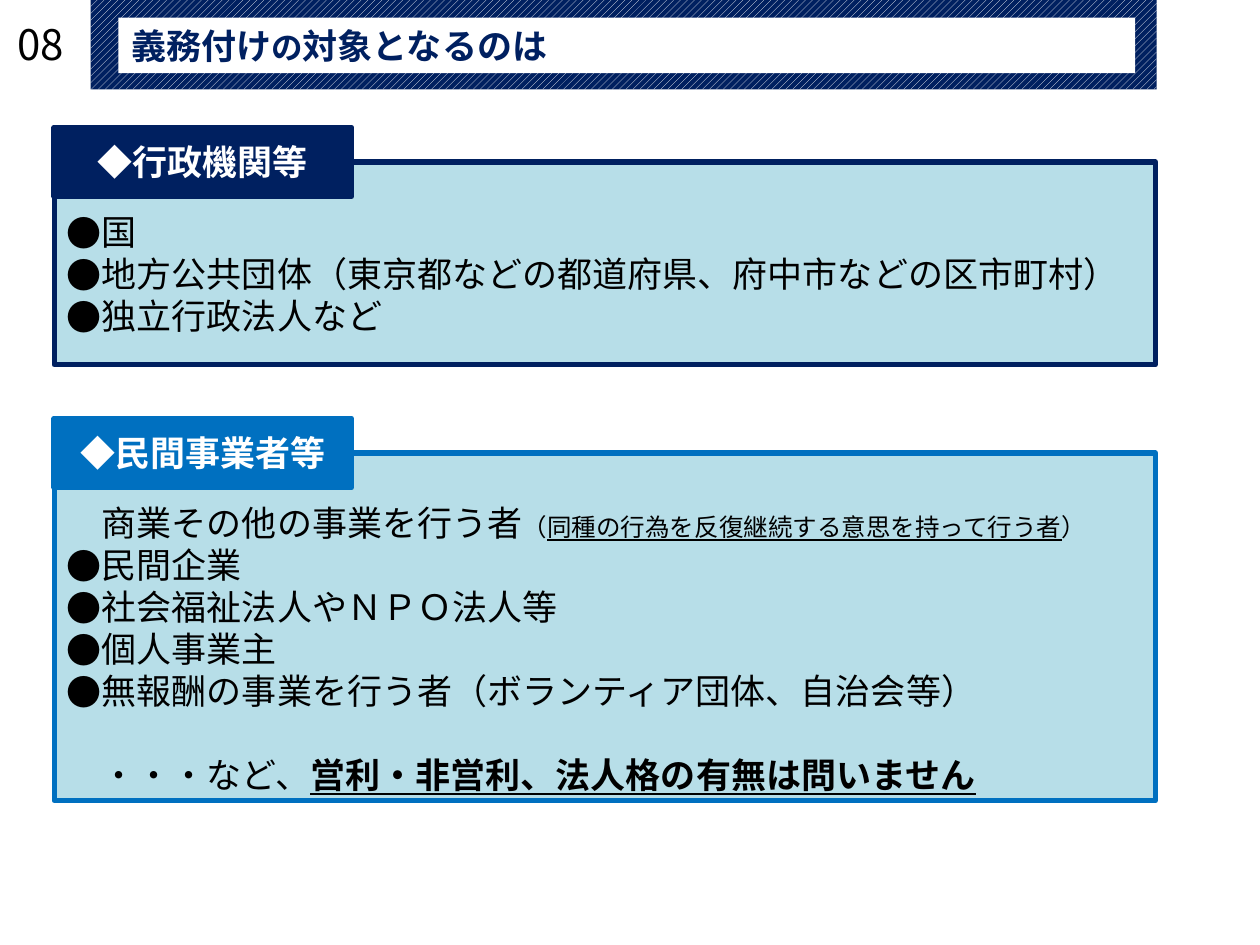
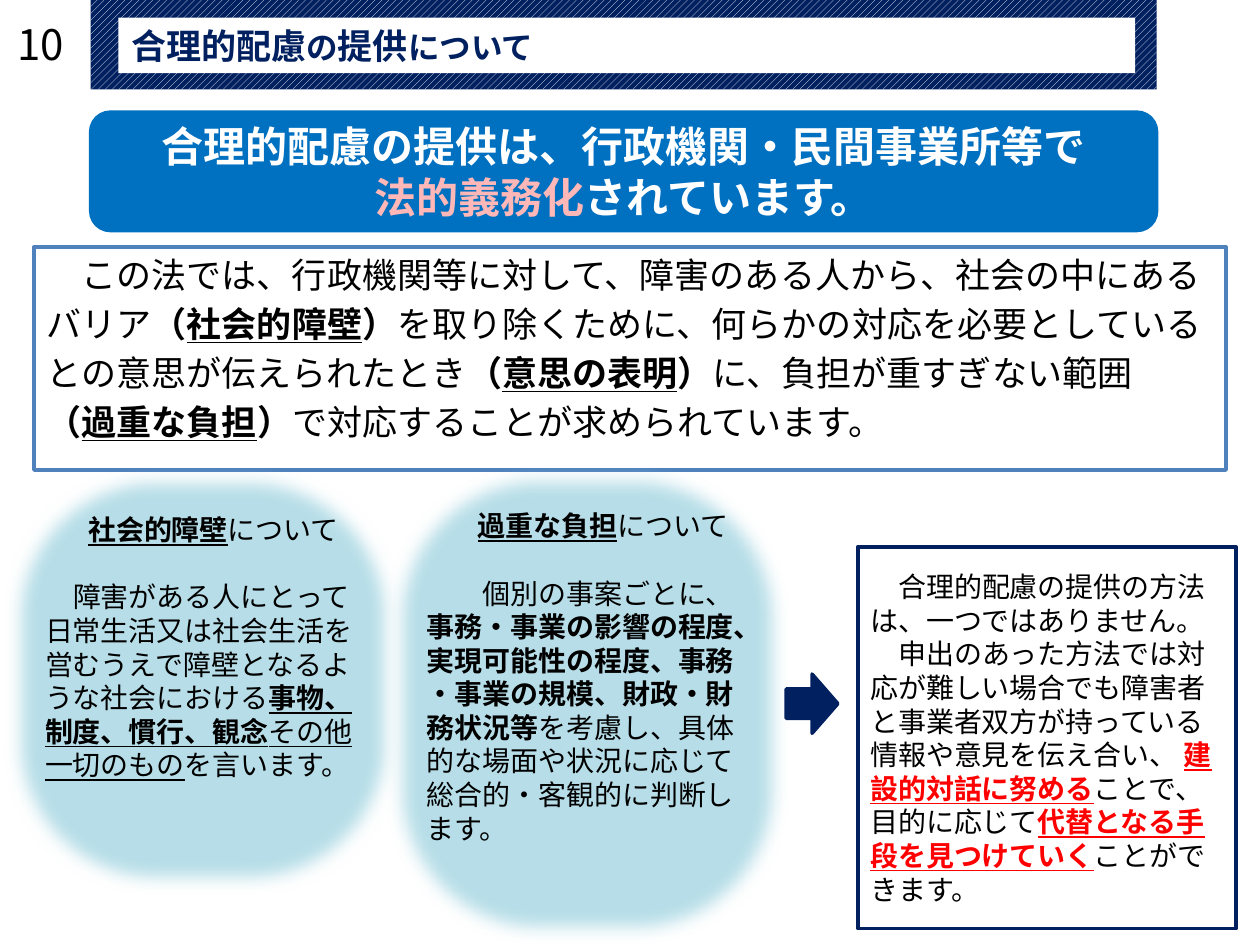
from dataclasses import dataclass
from typing import Optional

import lxml.etree
import pptx
import pptx.dml.color
import pptx.enum.dml
import pptx.enum.shapes
import pptx.enum.text
import pptx.oxml.ns
import pptx.util

SHAPES = pptx.enum.shapes.MSO_SHAPE
ALIGN = pptx.enum.text.PP_ALIGN
ANCHOR = pptx.enum.text.MSO_ANCHOR


@dataclass(frozen=True)
class Theme:
    font: str = "Noto Sans CJK JP"
    navy: str = "002060"
    blue: str = "0070C0"
    steel: str = "4F81BD"
    pale: str = "B7DEE8"
    pink: str = "FFB7B7"
    red: str = "FF0000"
    white: str = "FFFFFF"
    black: str = "000000"
    headline: int = 24
    body: int = 20
    title_particle: int = 18
    small: int = 16
    aside: int = 14
    leading: float = 1.2


@dataclass(frozen=True)
class Grid:
    width: int = pptx.util.Inches(10)
    height: int = pptx.util.Inches(7.5)
    columns: int = 100
    rows: int = 75


THEME = Theme()
GRID = Grid()


@dataclass(frozen=True)
class Area:
    column: float
    row: float
    columns: float
    rows: float

    def emu(self) -> tuple[int, int, int, int]:
        across, down = GRID.width / GRID.columns, GRID.height / GRID.rows
        return (round(self.column * across), round(self.row * down),
                round(self.columns * across), round(self.rows * down))


@dataclass(frozen=True)
class Run:
    text: str
    bold: Optional[bool] = None
    underline: bool = False
    size: Optional[int] = None
    color: Optional[str] = None


@dataclass(frozen=True)
class Line:
    runs: tuple[Run, ...]
    bullet: str = ""
    margin: float = 0
    first_indent: float = 0
    before: float = 0
    after: float = 0
    align: Optional[ALIGN] = None


@dataclass(frozen=True)
class Obligated:
    heading: str
    color: str
    tab_row: float
    panel_rows: float
    members: tuple[Line, ...]


@dataclass(frozen=True)
class Explanation:
    card: Area
    caption: Area
    term: str
    indent: int
    sentences: tuple[tuple[Run, ...], ...]


def line(*runs: str | Run, **layout) -> Line:
    return Line(tuple(Run(r) if isinstance(r, str) else r for r in runs), **layout)


def key(text: str, **style) -> Run:
    return Run(text, bold=True, underline=True, **style)


def bracketed(term: str) -> tuple[Run, ...]:
    return Run("（", bold=True), key(term), Run("）", bold=True)


def member(text: str) -> Line:
    return line(text, bullet="●", margin=1, first_indent=-1)


def rgb(color: str) -> pptx.dml.color.RGBColor:
    return pptx.dml.color.RGBColor.from_string(color)


def child(parent, tag: str, **attributes):
    element = lxml.etree.SubElement(parent, pptx.oxml.ns.qn(tag))
    for name, value in attributes.items():
        element.set(name, str(value))
    return element


def write_text(shape, lines, *, size=THEME.body, color=THEME.black, bold=False,
               align=ALIGN.LEFT, anchor=ANCHOR.TOP, lead_rows=0.0, gap=0.0) -> None:
    frame = shape.text_frame
    frame.word_wrap = True
    frame.auto_size = pptx.enum.text.MSO_AUTO_SIZE.NONE
    frame.vertical_anchor = anchor
    frame.margin_left = frame.margin_right = pptx.util.Inches(0.1)
    frame.margin_bottom = pptx.util.Inches(0.05)
    frame.margin_top = pptx.util.Inches(0.05) + pptx.util.Pt(lead_rows * size * THEME.leading)
    for index, item in enumerate(lines):
        paragraph = frame.paragraphs[0] if index == 0 else frame.add_paragraph()
        paragraph.alignment = align if item.align is None else item.align
        paragraph.line_spacing = pptx.util.Pt(size * THEME.leading)
        paragraph.space_before = pptx.util.Pt(item.before * size * THEME.leading + gap)
        paragraph.space_after = pptx.util.Pt(item.after * size * THEME.leading)
        layout = paragraph._p.get_or_add_pPr()
        layout.set("marL", str(pptx.util.Pt(item.margin * size)))
        layout.set("indent", str(pptx.util.Pt(item.first_indent * size)))
        if item.bullet:
            child(layout, "a:buFont", typeface=THEME.font)
            child(layout, "a:buChar", char=item.bullet)
        else:
            child(layout, "a:buNone")
        for part in item.runs:
            run = paragraph.add_run()
            run.text = part.text
            run.font.size = pptx.util.Pt(part.size or size)
            run.font.bold = bold if part.bold is None else part.bold
            run.font.underline = part.underline
            run.font.color.rgb = rgb(part.color or color)
            run.font.name = THEME.font
            child(run._r.get_or_add_rPr(), "a:ea", typeface=THEME.font)


def paint(shape, fill: Optional[str] = None, border: Optional[str] = None,
          weight: float = 3) -> None:
    if fill:
        shape.fill.solid()
        shape.fill.fore_color.rgb = rgb(fill)
    else:
        shape.fill.background()
    if border:
        shape.line.color.rgb = rgb(border)
        shape.line.width = pptx.util.Pt(weight)
    else:
        shape.line.fill.background()


def place(shape, area: Area) -> None:
    shape.left, shape.top, shape.width, shape.height = area.emu()


def add_block(slide, kind, area: Area, **look):
    block = slide.shapes.add_shape(kind, *area.emu())
    block.shadow.inherit = False
    paint(block, **look)
    return block


def add_header(slide, number: str, title_line: Line) -> None:
    title = slide.shapes.title
    place(title, Area(9.4, 1.4, 80.7, 4.4))
    paint(title, fill=THEME.white)
    write_text(title, [title_line], color=THEME.navy, bold=True, anchor=ANCHOR.MIDDLE)
    band = add_block(slide, SHAPES.RECTANGLE, Area(7.2, 0, 84.6, 7.1))
    band.fill.patterned()
    band.fill.pattern = pptx.enum.dml.MSO_PATTERN.WIDE_UPWARD_DIAGONAL
    band.fill.fore_color.rgb = rgb(THEME.white)
    band.fill.back_color.rgb = rgb(THEME.navy)
    title._element.addprevious(band._element)
    page = slide.shapes.add_textbox(*Area(0.4, 1, 6.3, 5).emu())
    write_text(page, [line(number)], size=THEME.headline, anchor=ANCHOR.MIDDLE)


def add_obligated(slide, panel, group: Obligated) -> None:
    place(panel, Area(4.3, group.tab_row + 2.75, 87.4, group.panel_rows))
    paint(panel, fill=THEME.pale, border=group.color)
    write_text(panel, group.members, lead_rows=1)
    tab = add_block(slide, SHAPES.RECTANGLE, Area(4.3, group.tab_row, 23.6, 5.5),
                    fill=group.color, border=group.color)
    write_text(tab, [line(group.heading)], color=THEME.white, bold=True,
               align=ALIGN.CENTER, anchor=ANCHOR.MIDDLE)


def add_explanation(slide, topic: Explanation) -> None:
    card = add_block(slide, SHAPES.ROUNDED_RECTANGLE, topic.card, fill=THEME.pale)
    card.adjustments[0] = 0.34
    effects = card._element.spPr.find(pptx.oxml.ns.qn("a:effectLst"))
    child(effects, "a:softEdge", rad=pptx.util.Pt(10))
    caption = slide.shapes.add_textbox(*topic.caption.emu())
    heading = line(key(topic.term), "について", align=ALIGN.CENTER, after=1)
    sentences = [Line(runs, first_indent=0 if index else topic.indent)
                 for index, runs in enumerate(topic.sentences)]
    write_text(caption, [heading, *sentences], size=THEME.small)


OBLIGATED = (
    Obligated("◆行政機関等", THEME.navy, 10.1, 16.1, (
        member("国"),
        member("地方公共団体（東京都などの都道府県、府中市などの区市町村）"),
        member("独立行政法人など"))),
    Obligated("◆民間事業者等", THEME.blue, 33.2, 27.6, (
        line("商業その他の事業を行う者", Run("（", size=THEME.aside),
             Run("同種の行為を反復継続する意思を持って行う者", underline=True, size=THEME.aside),
             Run("）", size=THEME.aside), margin=1),
        member("民間企業"),
        member("社会福祉法人やＮＰＯ法人等"),
        member("個人事業主"),
        member("無報酬の事業を行う者（ボランティア団体、自治会等）"),
        line("・・・など、", key("営利・非営利、法人格の有無は問いません"), margin=1, before=1))),
)

EXPLANATIONS = (
    Explanation(Area(0.4, 37, 31.4, 33.9), Area(2.6, 40.2, 28.7, 23.2), "社会的障壁", 1, (
        (Run("障害がある人にとって"),),
        (Run("日常生活又は社会生活を"),),
        (Run("営むうえで障壁となるよ"),),
        (Run("うな社会における"), key("事物、")),
        (key("制度、慣行、観念"), Run("その他", underline=True)),
        (Run("一切のもの", underline=True), Run("を言います。")))),
    Explanation(Area(30.6, 36.9, 32, 38), Area(32.9, 39.9, 29.9, 28.6), "過重な負担", 2, (
        (Run("個別の事案ごとに、"),),
        (Run("事務・事業の影響の程度、", bold=True),),
        (Run("実現可能性の程度、事務", bold=True),),
        (Run("・事業の規模、財政・財", bold=True),),
        (Run("務状況等", bold=True), Run("を考慮し、具体")),
        (Run("的な場面や状況に応じて"),),
        (Run("総合的・客観的に判断し"),),
        (Run("ます。"),))),
)


def build_obligated_parties(deck) -> None:
    slide = deck.slides.add_slide(deck.slide_layouts.get_by_name("Two Content"))
    add_header(slide, "08", line("義務付け", Run("の", size=THEME.title_particle),
                                 "対象となるのは"))
    for index, group in enumerate(OBLIGATED, start=1):
        add_obligated(slide, slide.placeholders[index], group)


def build_accommodation(deck) -> None:
    slide = deck.slides.add_slide(deck.slide_layouts.get_by_name("Title and Content"))
    add_header(slide, "10", line("合理的配慮", Run("の", size=THEME.title_particle), "提供",
                                 Run("について", size=THEME.title_particle)))

    summary = slide.placeholders[1]
    place(summary, Area(2.7, 19.6, 94.6, 17.7))
    paint(summary, border=THEME.steel, weight=2.25)
    write_text(summary, [
        line("この法では、行政機関等に対して、障害のある人から、社会の中にある", first_indent=1),
        line("バリア", *bracketed("社会的障壁"),
             "を取り除くために、何らかの対応を必要としている"),
        line("との意思が伝えられたとき", *bracketed("意思の表明"),
             "に、負担が重すぎない範囲"),
        line(*bracketed("過重な負担"), "で対応することが求められています。"),
    ], gap=4)

    duty = add_block(slide, SHAPES.ROUNDED_RECTANGLE, Area(7.2, 8.9, 84.6, 9.4),
                     fill=THEME.blue, border=THEME.blue, weight=2)
    write_text(duty, [
        line("合理的配慮の提供は、行政機関・民間事業所等で"),
        line(Run("法的義務化", color=THEME.pink), "されています。"),
    ], size=THEME.headline, color=THEME.white, bold=True,
        align=ALIGN.CENTER, anchor=ANCHOR.MIDDLE)

    for topic in EXPLANATIONS:
        add_explanation(slide, topic)

    dialogue = add_block(slide, SHAPES.RECTANGLE, Area(68.1, 43.4, 30, 30.3),
                         fill=THEME.white, border=THEME.navy, weight=2.25)
    write_text(dialogue, [
        line("合理的配慮の提供の方法は、一つではありません。", first_indent=1),
        line("申出のあった方法では対応が難しい場合でも障害者と事業者双方が"
             "持っている情報や意見を伝え合い、 ",
             key("建設的対話に努める", color=THEME.red), "ことで、目的に応じて",
             key("代替となる手段を見つけていく", color=THEME.red), "ことができます。",
             first_indent=1),
    ], size=THEME.small, anchor=ANCHOR.MIDDLE)
    add_block(slide, SHAPES.RIGHT_ARROW, Area(62.4, 53.5, 4.1, 4.7),
              fill=THEME.navy, border=THEME.navy, weight=2)


def main() -> None:
    deck = pptx.Presentation()
    deck.slide_width, deck.slide_height = GRID.width, GRID.height
    build_obligated_parties(deck)
    build_accommodation(deck)
    deck.save("out.pptx")


if __name__ == "__main__":
    main()
